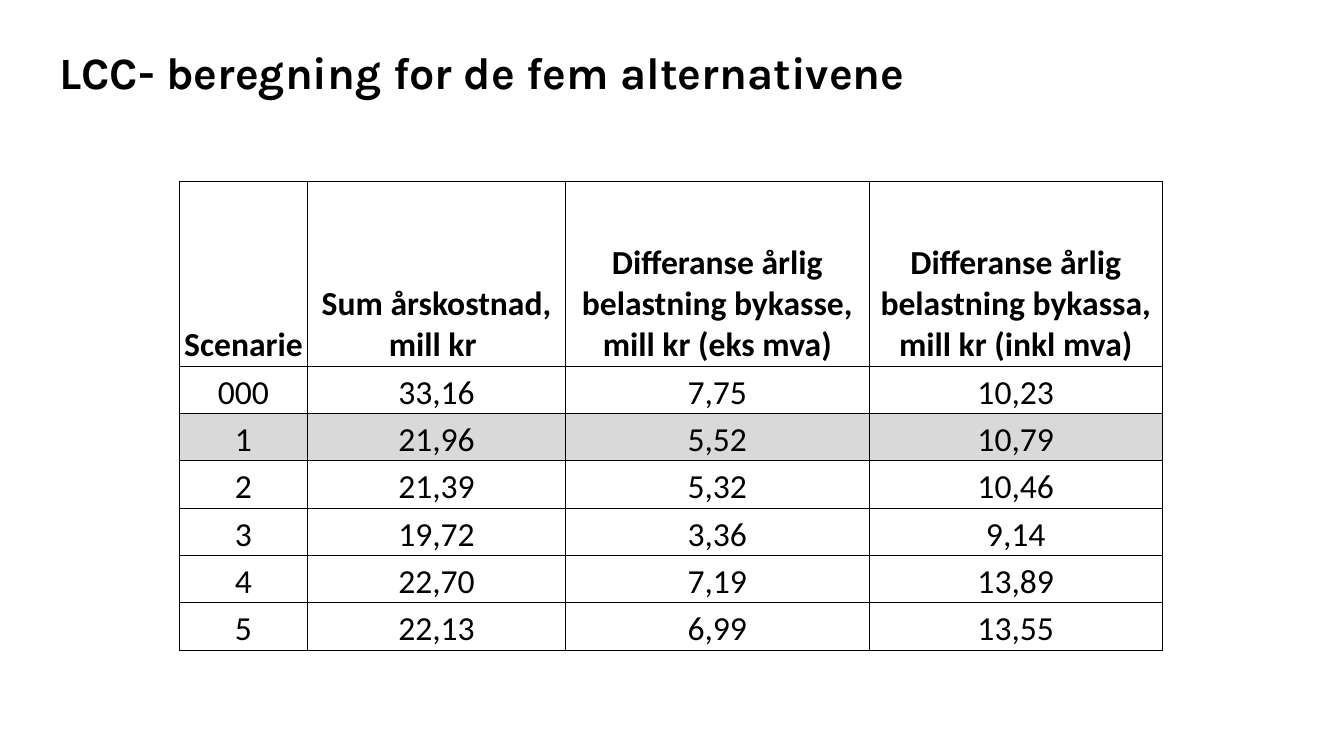
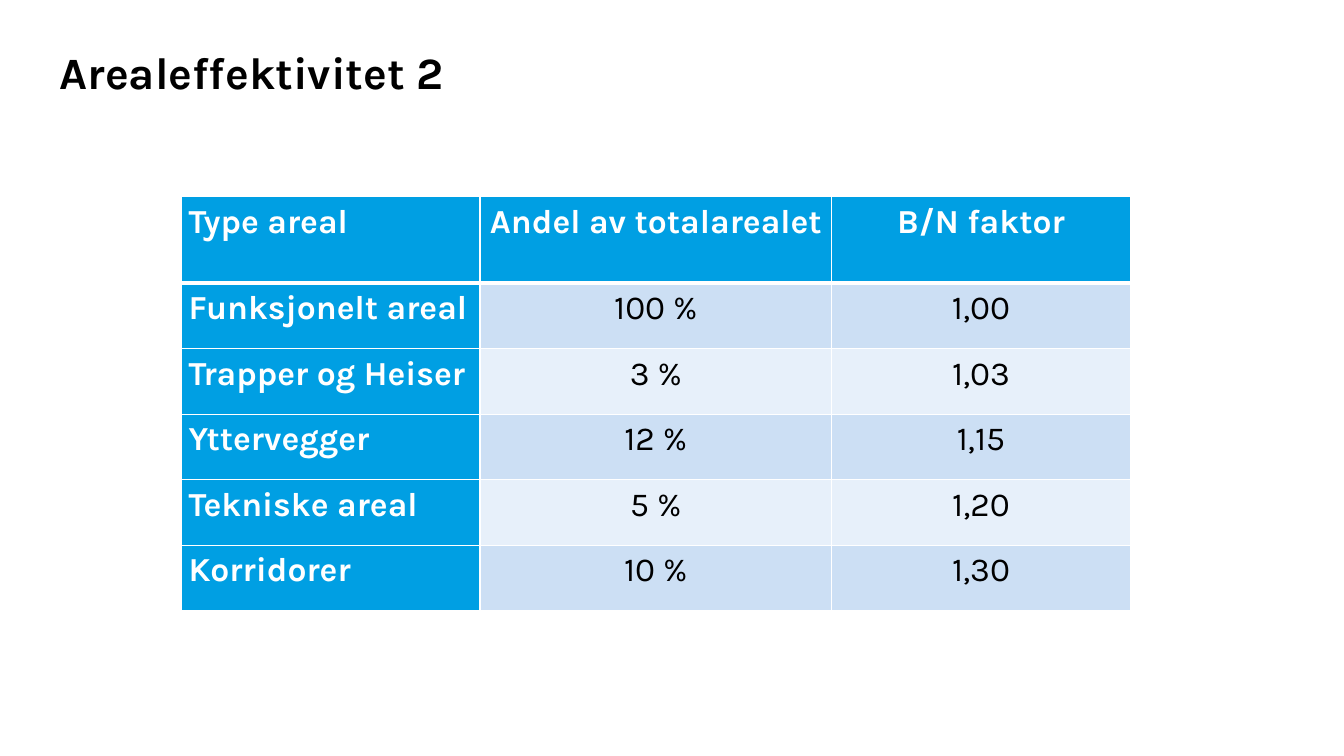
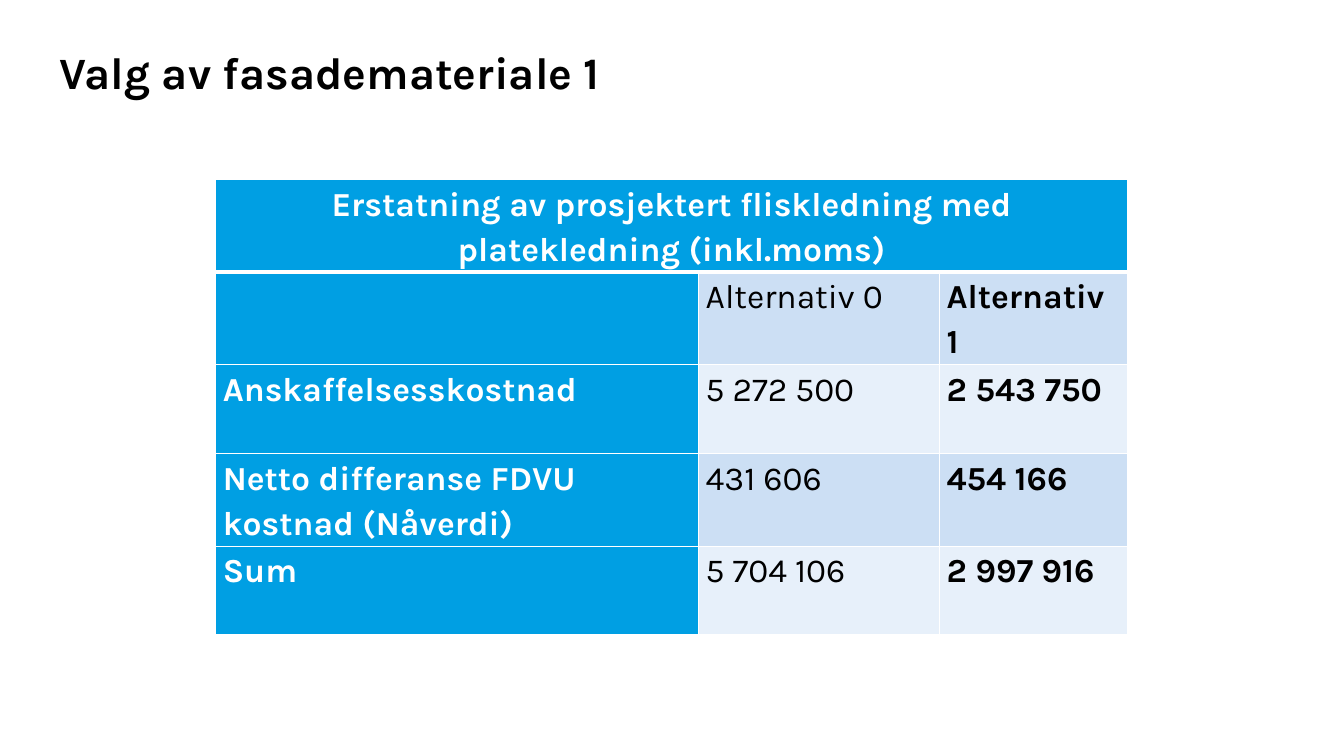
from lxml.etree import SubElement
from pptx import Presentation
from pptx.dml.color import RGBColor
from pptx.enum.text import MSO_ANCHOR, PP_ALIGN
from pptx.oxml.ns import qn
from pptx.util import Inches, Pt

COLORS = {"black": "000000", "white": "FFFFFF", "gray": "D9D9D9",
          "blue": "009FE3", "band": "CCDFF4", "pale": "E7F0FA"}

# Content: one entry per slide
LCC = {
    "title": "LCC- beregning for de fem alternativene",
    "at": (1.78, 1.8),
    "columns": [1.27, 2.56, 3.01, 2.91],
    "heights": [1.83] + [0.47] * 6,
    "rows": [
        ("Scenarie", "Sum årskostnad,\nmill kr ",
         "Differanse årlig belastning bykasse, mill kr (eks mva)",
         "Differanse årlig belastning bykassa, mill kr (inkl mva)"),
        ("000", "33,16", "7,75", "10,23"),
        ("1", "21,96", "5,52", "10,79"),
        ("2", "21,39", "5,32", "10,46"),
        ("3", "19,72", "3,36", "9,14"),
        ("4", "22,70", "7,19", "13,89"),
        ("5", "22,13", "6,99", "13,55"),
    ],
}
AREA = {
    "title": "Arealeffektivitet 2",
    "at": (1.8, 1.95),
    "columns": [2.96, 3.49, 2.96],
    "heights": [0.86] + [0.65] * 5,
    "rows": [
        ("Type areal", "Andel av totalarealet", "B/N faktor"),
        ("Funksjonelt areal", "100 %", "1,00"),
        ("Trapper og Heiser", "3 %", "1,03"),
        ("Yttervegger", "12 %", "1,15"),
        ("Tekniske areal", "5 %", "1,20"),
        ("Korridorer", "10 %", "1,30"),
    ],
}
FACADE = {
    "title": "Valg av fasademateriale 1",
    "at": (2.14, 1.78),
    "columns": [4.79, 2.39, 1.86],
    "heights": [0.88] * 5,
    "rows": [
        ("Erstatning av prosjektert fliskledning med platekledning (inkl.moms)", "", ""),
        ("", "Alternativ 0", "Alternativ 1"),
        ("Anskaffelsesskostnad", "5 272 500", "2 543 750"),
        ("Netto differanse FDVU kostnad (Nåverdi)", "431 606", "454 166"),
        ("Sum", "5 704 106", "2 997 916"),
    ],
}


def rgb(name):
    return RGBColor.from_string(COLORS[name])


def style_para(para, font, size, color, bold, align, spacing):
    para.alignment = align
    para.line_spacing = spacing
    para.font.name = font
    para.font.size = Pt(size)
    para.font.bold = bold
    para.font.color.rgb = rgb(color)


def add_page(deck, title):
    page = deck.slides.add_slide(deck.slide_layouts[6])
    box = page.shapes.add_textbox(Inches(0.59), Inches(0.5), Inches(12.14), Inches(0.75))
    frame = box.text_frame
    frame.word_wrap = True
    frame.margin_left = frame.margin_top = frame.margin_right = frame.margin_bottom = 0
    frame.text = title
    style_para(frame.paragraphs[0], "Karla", 32, "black", True, PP_ALIGN.LEFT, 0.9)
    return page


def add_grid(page, content):
    columns, heights = content["columns"], content["heights"]
    left, top = content["at"]
    table = page.shapes.add_table(
        len(heights), len(columns), Inches(left), Inches(top),
        Inches(sum(columns)), Inches(sum(heights))).table
    table.first_row = table.horz_banding = False
    for column, width in zip(table.columns, columns):
        column.width = Inches(width)
    for row, height in zip(table.rows, heights):
        row.height = Inches(height)
    return table


def set_borders(cell, color, left=1, right=1, top=1, bottom=1):
    props = cell._tc.get_or_add_tcPr()
    for side, width in zip("LRTB", (left, right, top, bottom)):
        line = SubElement(props, qn(f"a:ln{side}"), w=str(Pt(width)))
        fill = SubElement(line, qn("a:solidFill"))
        SubElement(fill, qn("a:srgbClr"), val=COLORS[color])


def set_margins(cell, side, top):
    cell.margin_left = cell.margin_right = Inches(side)
    cell.margin_top = Inches(top)
    cell.margin_bottom = 0


def fill_plain(table, rows, marked_row):
    """Black grid with one marked row."""
    for r, row in enumerate(rows):
        for c, text in enumerate(row):
            cell = table.cell(r, c)
            cell.text = text
            cell.vertical_anchor = MSO_ANCHOR.BOTTOM
            set_margins(cell, 0.01, 0.01)
            set_borders(cell, "black", 0.5, 0.5, 0.5, 0.5)
            if r == marked_row:
                cell.fill.solid()
                cell.fill.fore_color.rgb = rgb("gray")
            else:
                cell.fill.background()
            for para in cell.text_frame.paragraphs:
                style_para(para, "Calibri", 24, "black", r == 0, PP_ALIGN.CENTER, 1.0)


def fill_banded(table, rows, centered, bold_column=None):
    """Blue header row and first column, banded body."""
    for r, row in enumerate(rows):
        for c, text in enumerate(row):
            cell = table.cell(r, c)
            heading = r == 0 or c == 0
            if text:
                cell.text = text
            set_margins(cell, 0.07, 0)
            set_borders(cell, "white", top=3 if r == 1 else 1, bottom=3 if r == 0 else 1)
            cell.fill.solid()
            cell.fill.fore_color.rgb = rgb("blue" if heading else "band" if r % 2 else "pale")
            style_para(cell.text_frame.paragraphs[0], "Karla", 24,
                       "white" if heading else "black", heading or c == bold_column,
                       PP_ALIGN.CENTER if centered(r, c) else PP_ALIGN.LEFT, 1.15)


def main():
    deck = Presentation()
    deck.slide_width, deck.slide_height = Inches(13.33), Inches(7.5)

    # Life-cycle cost
    table = add_grid(add_page(deck, LCC["title"]), LCC)
    fill_plain(table, LCC["rows"], marked_row=2)

    # Area efficiency
    table = add_grid(add_page(deck, AREA["title"]), AREA)
    fill_banded(table, AREA["rows"], lambda r, c: c > 0)

    # Facade material, with a heading across all columns
    table = add_grid(add_page(deck, FACADE["title"]), FACADE)
    fill_banded(table, FACADE["rows"], lambda r, c: r == 0, bold_column=2)
    table.cell(0, 0).merge(table.cell(0, 2))

    deck.save("out.pptx")


if __name__ == "__main__":
    main()
